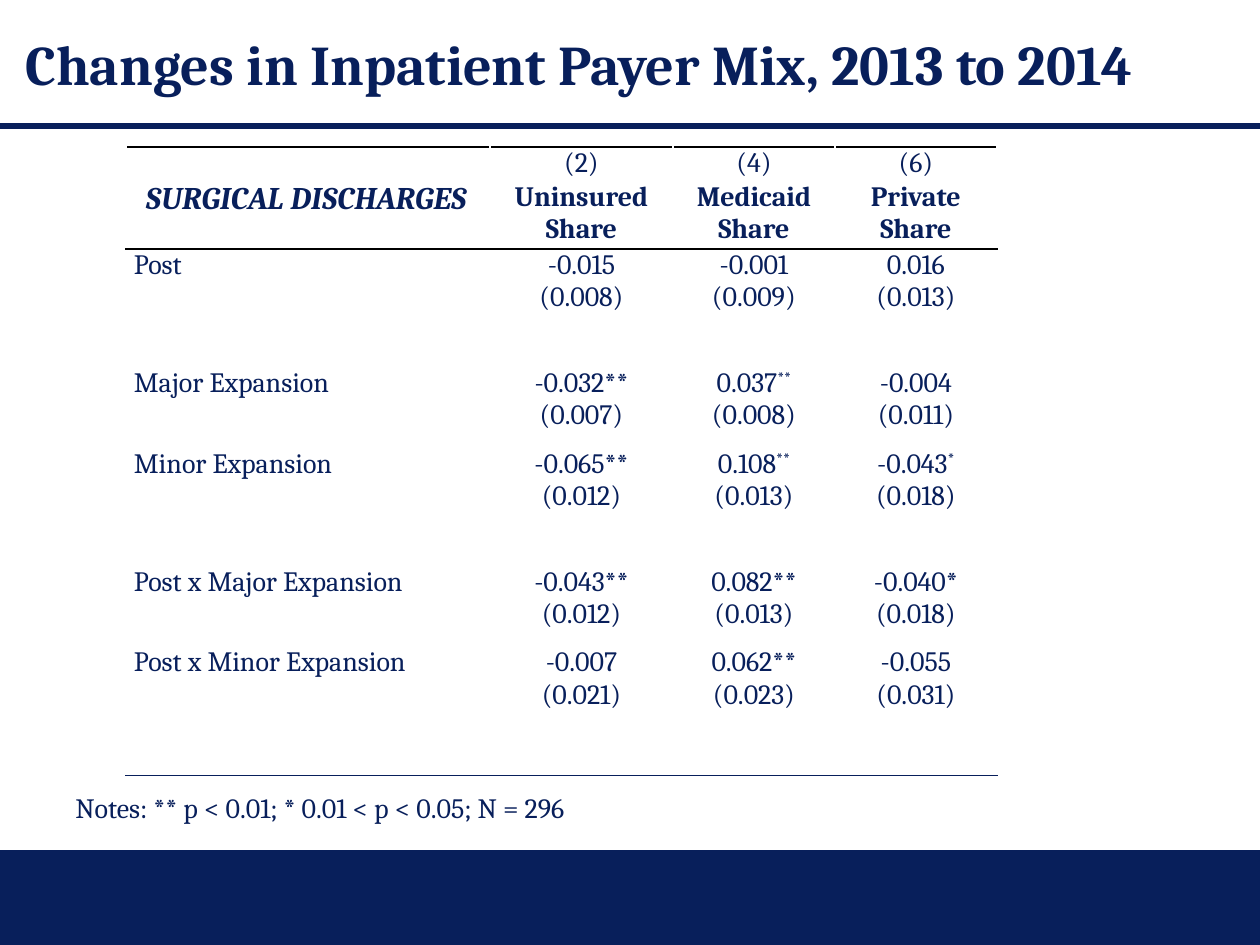
from lxml.etree import SubElement
from pptx import Presentation
from pptx.dml.color import RGBColor
from pptx.enum.shapes import MSO_CONNECTOR, MSO_SHAPE
from pptx.enum.text import MSO_ANCHOR as Anchor, PP_ALIGN as Align
from pptx.oxml.ns import qn
from pptx.util import Emu, Pt

# Content: "^" starts raised text
TITLE = "Changes in Inpatient Payer Mix, 2013 to 2014"
NOTES = "Notes: ** p < 0.01; * 0.01 < p < 0.05; N = 296"
NUMBERS = ["", "(2)", "(4)", "(6)"]
HEADINGS = ["SURGICAL DISCHARGES", "Uninsured Share", "Medicaid Share", "Private Share"]
ESTIMATES = [
    ["Post", "-0.015\n(0.008)", "-0.001\n(0.009)", "0.016\n(0.013)"],
    ["Major Expansion", "-0.032**\n(0.007)", "0.037^**\n(0.008)", "-0.004\n(0.011)"],
    ["Minor Expansion", "-0.065**\n(0.012)", "0.108^**\n(0.013)", "-0.043^*\n(0.018)"],
    ["Post x Major Expansion", "-0.043**\n(0.012)", "0.082**\n(0.013)", "-0.040*\n(0.018)"],
    ["Post x Minor Expansion", "-0.007\n(0.021)", "0.062**\n(0.023)", "-0.055\n(0.031)"],
]
ROWS = [NUMBERS, HEADINGS] + ESTIMATES
LAST = len(ROWS) - 1

COLORS = {"navy": "081F5B", "black": "000000", "white": "FFFFFF"}
FONT = "Cambria"

# Layout in px
PX = 914400 // 126
WIDTH, HEIGHT = 1260, 945
COLUMN_WIDTHS = [364, 183, 162, 162]
ROW_HEIGHTS = [34, 68, 118, 81, 118, 81, 129]
TABLE_LEFT, TABLE_TOP = 126, 147
HEADING_INDENT = 20

# Rules above ("T") and below ("B") table rows: color, points
RULES = {
    (0, "T"): ("black", 1.5),
    (1, "B"): ("black", 1),
    (2, "T"): ("black", 1),
    (LAST, "B"): ("navy", 1),
}


def px(*lengths):
    return [Emu(length * PX) for length in lengths]


def color(name):
    return RGBColor.from_string(COLORS[name])


def write(frame, text, size=16, bold=False, italic=False, align=Align.LEFT):
    frame.word_wrap = True
    for i, line in enumerate(text.split("\n")):
        paragraph = frame.paragraphs[0] if i == 0 else frame.add_paragraph()
        paragraph.alignment = align
        if not line:
            SubElement(paragraph._p, qn("a:endParaRPr"), sz=str(size * 100))
            continue
        for raised, part in enumerate(line.split("^")):
            run = paragraph.add_run()
            run.text = part
            font = run.font
            font.name, font.size = FONT, Pt(size)
            font.bold, font.italic = bold, italic
            font.color.rgb = color("navy")
            if raised:
                run._r.get_or_add_rPr().set("baseline", "30000")


def add_rule(cell, side, color_name, points):
    # Borders come before the fill in the cell properties
    properties = cell._tc.get_or_add_tcPr()
    border = SubElement(properties, qn(f"a:ln{side}"), w=str(Pt(points)))
    fill = SubElement(border, qn("a:solidFill"))
    SubElement(fill, qn("a:srgbClr"), val=COLORS[color_name])


def add_estimates(slide):
    frame = slide.shapes.add_table(
        len(ROWS), len(COLUMN_WIDTHS),
        *px(TABLE_LEFT, TABLE_TOP, sum(COLUMN_WIDTHS), sum(ROW_HEIGHTS)))
    table = frame.table
    table.first_row = table.horz_banding = False
    for column, width in zip(table.columns, px(*COLUMN_WIDTHS)):
        column.width = width
    for row, height in zip(table.rows, px(*ROW_HEIGHTS)):
        row.height = height

    for r, texts in enumerate(ROWS):
        for c, text in enumerate(texts):
            cell = table.cell(r, c)
            corner = r == 1 and c == 0
            side_margin = 9 if r > 1 and c else 8
            cell.margin_left, cell.margin_right = px(
                HEADING_INDENT if corner else side_margin, side_margin)
            cell.margin_top = cell.margin_bottom = 0
            for side in "TB":
                if (r, side) in RULES:
                    add_rule(cell, side, *RULES[r, side])
            cell.fill.solid()
            cell.fill.fore_color.rgb = color("white")
            write(cell.text_frame, text, size=18 if corner else 16,
                  bold=r == 1, italic=corner,
                  align=Align.CENTER if c else Align.LEFT)


def main():
    deck = Presentation()
    deck.slide_width, deck.slide_height = px(WIDTH, HEIGHT)
    slide = deck.slides.add_slide(deck.slide_layouts[6])
    shapes = slide.shapes

    # Footer band
    footer = shapes.add_shape(MSO_SHAPE.RECTANGLE, *px(0, 850, WIDTH, 95))
    footer.shadow.inherit = False
    footer.fill.solid()
    footer.fill.fore_color.rgb = color("navy")
    footer.line.fill.background()

    # Title and the line under it
    title_line = shapes.add_connector(MSO_CONNECTOR.STRAIGHT, *px(0, 126, WIDTH, 126))
    title_line.line.color.rgb = color("navy")
    title_line.line.width = Pt(3)
    SubElement(title_line._element.spPr, qn("a:effectLst"))
    title = shapes.add_textbox(*px(13, 0, 1228, 126)).text_frame
    title.vertical_anchor = Anchor.MIDDLE
    write(title, TITLE, size=32, bold=True)

    add_estimates(slide)

    # Notes
    write(shapes.add_textbox(*px(63, 784, 703, 115)).text_frame, NOTES)

    deck.save("out.pptx")


if __name__ == "__main__":
    main()
